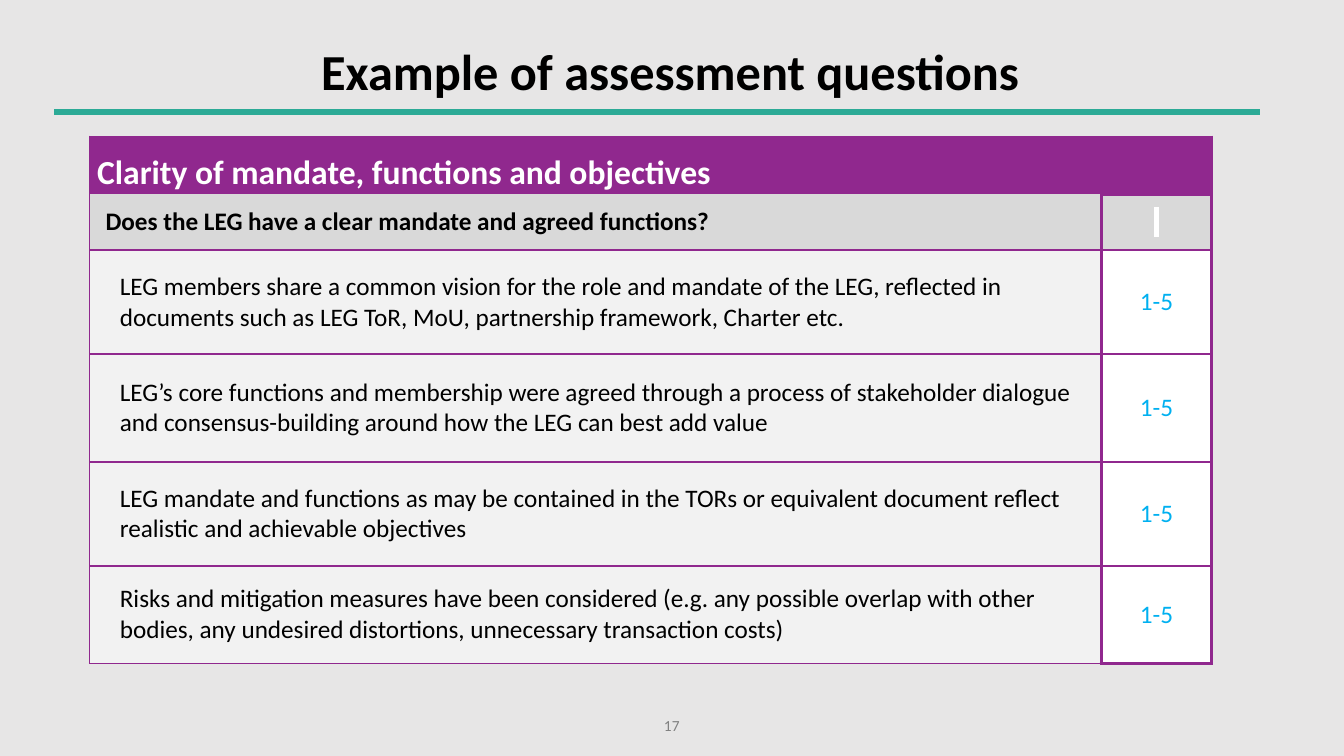
"""Build the slide with example assessment questions."""
from lxml.etree import Element, SubElement
from pptx import Presentation
from pptx.dml.color import RGBColor
from pptx.enum.shapes import MSO_CONNECTOR as Connector
from pptx.enum.text import MSO_ANCHOR as Anchor, PP_ALIGN as Align
from pptx.oxml.ns import qn
from pptx.util import Cm, Pt

PURPLE, TEAL, WHITE, BLACK = "90288E", "2CAA96", "FFFFFF", "000000"
SCORE = "1-5"
HEADING = "Clarity of mandate, functions and objectives"
QUESTION = "Does the LEG have a clear mandate and agreed functions?"
STATEMENTS = [
    ("LEG members share a common vision for the role and mandate of the LEG, "
     "reflected in documents such as LEG ToR, MoU, partnership framework, Charter etc."),
    ("LEG’s core functions and membership were agreed through a process of stakeholder "
     "dialogue and consensus-building around how the LEG can best add value"),
    ("LEG mandate and functions as may be contained in the TORs or equivalent document "
     "reflect\nrealistic and achievable objectives"),
    ("Risks and mitigation measures have been considered (e.g. any possible overlap with "
     "other bodies, any undesired distortions, unnecessary transaction costs)"),
]
ROW_HEIGHTS = [1.45, 1.42, 2.62, 2.72, 2.62, 2.46]
COLUMN_WIDTHS = [25.5, 2.77]


def colour(hex_value):
    return RGBColor.from_string(hex_value)


def assign(target, values):
    for name, value in values.items():
        setattr(target, name, value)


class Deck:
    def __init__(self, font, background):
        self.font = font
        self.show = Presentation()
        assign(self.show, {"slide_width": Cm(33.87), "slide_height": Cm(19.05)})
        self.slide = self.show.slides.add_slide(self.show.slide_layouts[5])
        fill = self.slide.background.fill
        fill.solid()
        fill.fore_color.rgb = colour(background)

    def set_text(self, holder, text, size, ink=BLACK, bold=False, align=Align.LEFT,
                 anchor=Anchor.MIDDLE, margins=(0, 0, 0, 0), highlight=None, spacing=1.0):
        frame = holder.text_frame
        frame.text = text
        left, top, right, bottom = map(Cm, margins)
        box = frame if hasattr(holder, "shape_id") else holder
        assign(box, {"vertical_anchor": anchor,
                     "margin_left": left, "margin_top": top,
                     "margin_right": right, "margin_bottom": bottom})
        frame.word_wrap = True
        for paragraph in frame.paragraphs:
            assign(paragraph, {"alignment": align, "line_spacing": spacing,
                               "space_before": Pt(0)})
            for run in paragraph.runs:
                assign(run.font, {"name": self.font, "size": Pt(size), "bold": bold})
                run.font.color.rgb = colour(ink)
                if highlight:
                    marker = Element(qn("a:highlight"))
                    SubElement(marker, qn("a:srgbClr"), val=highlight)
                    run.font._element.find(qn("a:solidFill")).addnext(marker)

    def title(self, text, box):
        heading = self.slide.shapes.title
        assign(heading, dict(zip(("left", "top", "width", "height"), map(Cm, box))))
        self.set_text(heading, text, 36, bold=True, align=Align.CENTER,
                      margins=(1, 0.13, 1, 0.13), spacing=0.9)

    def label(self, text, box, **style):
        holder = self.slide.shapes.add_textbox(*map(Cm, box))
        self.set_text(holder, text, **style)

    def rule(self, left, right, y, ink, weight):
        line = self.slide.shapes.add_connector(
            Connector.STRAIGHT, Cm(left), Cm(y), Cm(right), Cm(y))
        line.line.color.rgb = colour(ink)
        line.line.width = Pt(weight)
        SubElement(line._element.spPr, qn("a:effectLst"))

    def table(self, left, top, widths, heights):
        grid = self.slide.shapes.add_table(
            len(heights), len(widths), Cm(left), Cm(top),
            Cm(sum(widths)), Cm(sum(heights))).table
        assign(grid, {"first_row": False, "horz_banding": False})
        for column, width in zip(grid.columns, widths):
            column.width = Cm(width)
        for row, height in zip(grid.rows, heights):
            row.height = Cm(height)
        return grid

    def cell(self, cell, text, fill, borders, **style):
        properties = cell._tc.get_or_add_tcPr()
        for side, weight in borders.items():
            edge = SubElement(properties, qn(f"a:ln{side}"), w=str(Pt(weight)))
            ink = SubElement(edge, qn("a:solidFill"))
            SubElement(ink, qn("a:srgbClr"), val=PURPLE)
        cell.fill.solid()
        cell.fill.fore_color.rgb = colour(fill)
        self.set_text(cell, text, **style)


def main():
    deck = Deck("Calibri", "E7E6E6")
    deck.label("17", (16.23, 17.91, 1.4, 0.74), size=11, ink="808080", align=Align.CENTER)
    deck.title("Example of assessment questions", (1.07, 0.48, 31.65, 2.8))
    deck.rule(1.37, 31.75, 2.82, TEAL, 4.5)

    questions = deck.table(2.26, 3.43, COLUMN_WIDTHS, ROW_HEIGHTS)
    questions.cell(0, 0).merge(questions.cell(0, 1))
    thin = {"L": 1, "R": 3, "T": 1, "B": 1}
    deck.cell(questions.cell(0, 0), HEADING, PURPLE, thin, size=24, ink=WHITE, bold=True,
              anchor=Anchor.BOTTOM, margins=(0.19, 0, 0, 0))
    deck.cell(questions.cell(1, 0), QUESTION, "D9D9D9", thin, size=18, bold=True,
              margins=(0.4, 0, 0, 0))
    score_style = {"size": 18, "ink": "00B0F0", "align": Align.CENTER, "highlight": WHITE}
    deck.cell(questions.cell(1, 1), " ", "D9D9D9", thin | {"L": 3, "T": 3}, **score_style)
    for row, statement in enumerate(STATEMENTS, start=2):
        bottom = 3 if row == len(ROW_HEIGHTS) - 1 else 1
        deck.cell(questions.cell(row, 0), statement, "F2F2F2", thin, size=18,
                  margins=(0.76, 0, 0, 0))
        deck.cell(questions.cell(row, 1), SCORE, WHITE, thin | {"L": 3, "B": bottom},
                  **score_style)
    deck.show.save("out.pptx")


if __name__ == "__main__":
    main()
